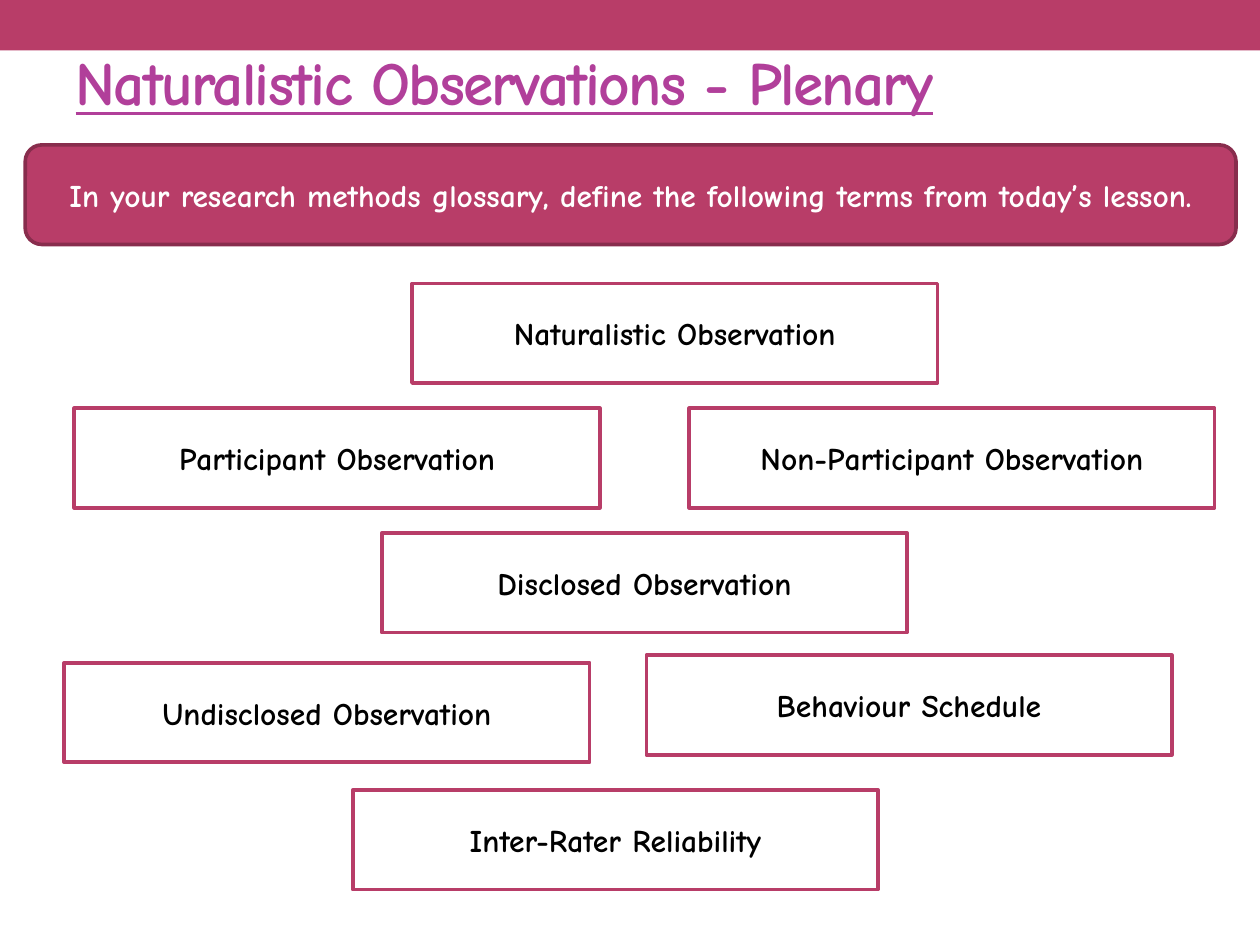
from pptx import Presentation
from pptx.dml.color import RGBColor
from pptx.enum.shapes import MSO_SHAPE
from pptx.enum.text import MSO_ANCHOR, MSO_AUTO_SIZE, PP_ALIGN
from pptx.util import Inches, Pt

RECTANGLE, ROUNDED = MSO_SHAPE.RECTANGLE, MSO_SHAPE.ROUNDED_RECTANGLE
MIDDLE = MSO_ANCHOR.MIDDLE
LEFT, CENTER = PP_ALIGN.LEFT, PP_ALIGN.CENTER

ROSE = RGBColor(0xB8, 0x3D, 0x68)
DARK_ROSE = RGBColor(0x88, 0x2D, 0x4D)
PURPLE = RGBColor(0xB1, 0x3F, 0x9A)
WHITE = RGBColor(0xFF, 0xFF, 0xFF)
BLACK = RGBColor(0x00, 0x00, 0x00)
FONT = "Comic Neue"

BOX_WIDTH, BOX_HEIGHT = 4.17, 0.79
FIRST_ROW, ROW_STEP = 2.25, 0.99

deck = Presentation()
deck.slide_width, deck.slide_height = Inches(10), Inches(7.5)
page = deck.slides.add_slide(deck.slide_layouts[5])


def write(shape, text, size, color, align):
    frame = shape.text_frame
    frame.word_wrap = True
    frame.auto_size = MSO_AUTO_SIZE.NONE
    frame.vertical_anchor = MIDDLE
    para = frame.paragraphs[0]
    para.alignment = align
    span = para.add_run()
    span.text = text
    span.font.name = FONT
    span.font.size = Pt(size)
    span.font.bold = True
    span.font.color.rgb = color
    return span


def add_box(kind, left, top, width, height, fill, line=None):
    box = page.shapes.add_shape(
        kind, Inches(left), Inches(top), Inches(width), Inches(height))
    box.shadow.inherit = False
    box.fill.solid()
    box.fill.fore_color.rgb = fill
    if line is None:
        box.line.fill.background()
    else:
        box.line.color.rgb = line
        box.line.width = Pt(2.08)
    return box


# Top band and title
add_box(RECTANGLE, 0, 0, 10, 0.4, ROSE)
title = page.shapes.title
title.left, title.top = Inches(0.5), Inches(0.3)
title.width, title.height = Inches(9), Inches(0.69)
heading = write(title, "Naturalistic Observations - Plenary", 35, PURPLE, LEFT)
heading.font.underline = True
heading.font._element.set("spc", "-100")

# Glossary terms: text, left edge, row, nudge below the row line
terms = [
    ("Naturalistic Observation", 3.27, 0, 0),
    ("Participant Observation", 0.59, 1, 0),
    ("Non-Participant Observation", 5.47, 1, 0),
    ("Disclosed Observation", 3.03, 2, 0),
    ("Undisclosed Observation", 0.51, 3, 0.04),
    ("Behaviour Schedule", 5.13, 3, -0.02),
    ("Inter-Rater Reliability", 2.8, 4, 0.06),
]
for term, left, row, nudge in terms:
    top = FIRST_ROW + row * ROW_STEP + nudge
    box = add_box(RECTANGLE, left, top, BOX_WIDTH, BOX_HEIGHT, WHITE, ROSE)
    write(box, term, 18, BLACK, CENTER)

# Task banner
banner = add_box(ROUNDED, 0.2, 1.15, 9.61, BOX_HEIGHT, ROSE, DARK_ROSE)
write(banner, "In your research methods glossary, define the following terms "
      "from today’s lesson.", 18, WHITE, CENTER)

deck.save("out.pptx")
